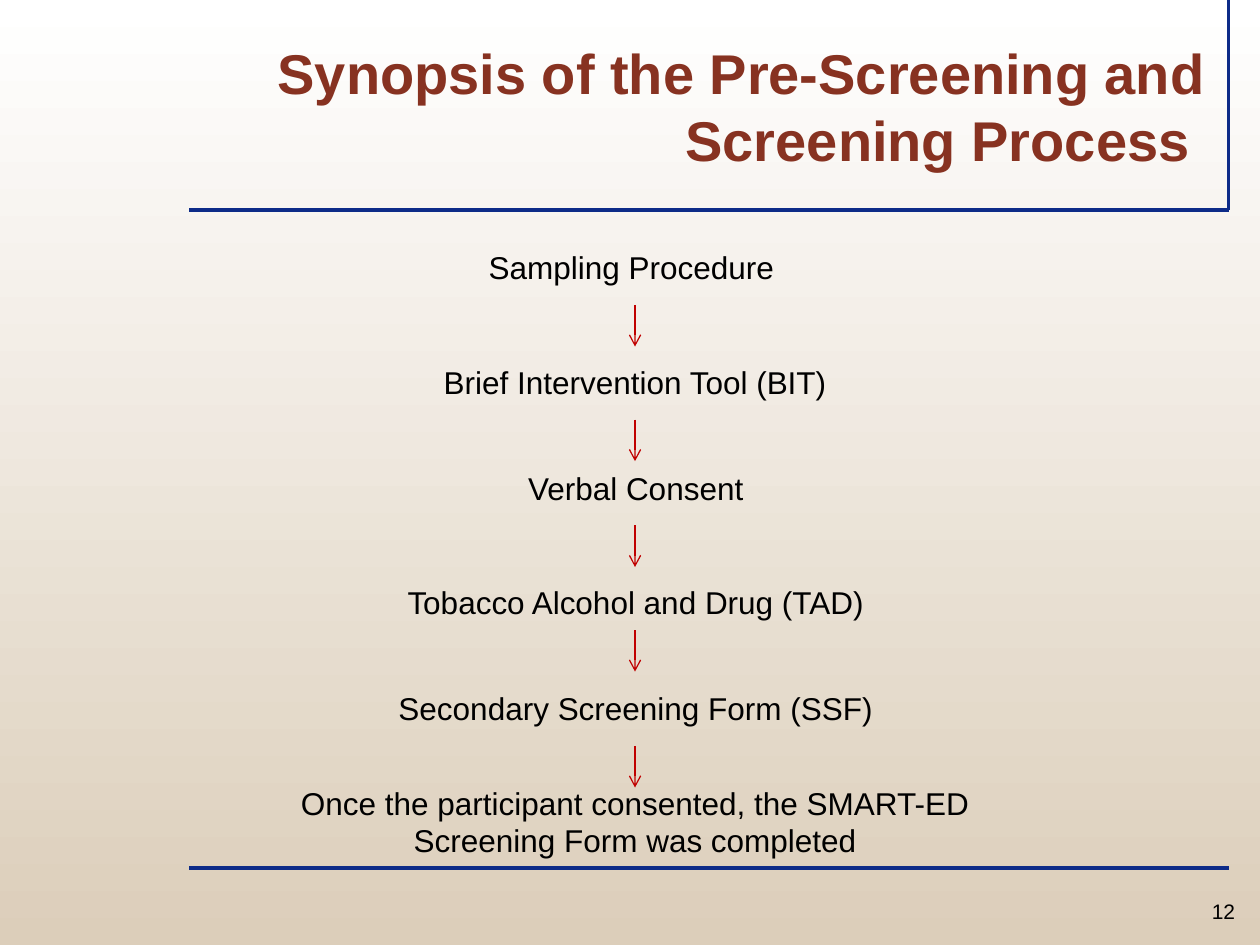
from pptx import Presentation
from pptx.dml.color import RGBColor
from pptx.enum.shapes import MSO_CONNECTOR as CONNECTOR
from pptx.enum.text import MSO_ANCHOR as ANCHOR, PP_ALIGN as ALIGN
from pptx.oxml.ns import qn
from pptx.util import Inches, Pt
from lxml.etree import SubElement

WHITE = RGBColor(0xFF, 0xFF, 0xFF)
SAND = RGBColor(0xDC, 0xCE, 0xBA)
NAVY = RGBColor(0x0D, 0x2B, 0x88)
BRICK = RGBColor(0x87, 0x32, 0x21)
RED = RGBColor(0xC0, 0x00, 0x00)
BLACK = RGBColor(0x00, 0x00, 0x00)

RULES = [(9.75, 0, 9.75, 1.67), (1.5, 1.67, 9.75, 1.67), (1.5, 6.89, 9.75, 6.89)]
STEPS = [
    ("Sampling Procedure ", (3.67, 1.92, 2.75, 0.42)),
    ("Brief Intervention Tool (BIT)", (3.29, 2.83, 3.5, 0.4)),
    ("Verbal Consent", (3.92, 3.67, 2.25, 0.42)),
    ("Tobacco Alcohol and Drug (TAD)", (2.92, 4.58, 4.25, 0.4)),
    ("Secondary Screening Form (SSF)", (2.92, 5.42, 4.25, 0.4)),
    ("Once the participant consented, the SMART-ED\nScreening Form was completed",
     (0.83, 6.17, 8.42, 0.71)),
]
ARROW_X, ARROW_LENGTH = 5.04, 0.33
ARROW_TOPS = [2.42, 3.33, 4.17, 5, 5.92]


def set_background(s):
    fill = s.background.fill
    fill.gradient()
    fill.gradient_angle = 270
    for stop, color in zip(fill.gradient_stops, (WHITE, SAND)):
        stop.color.rgb = color


def add_text(s, text, box, align=ALIGN.CENTER, anchor=ANCHOR.TOP, **font):
    tf = s.shapes.add_textbox(*map(Inches, box)).text_frame
    tf.word_wrap = True
    tf.vertical_anchor = anchor
    tf.text = text
    style = {"name": "Arial", "size": Pt(18), **font}
    color = style.pop("color", BLACK)
    for p in tf.paragraphs:
        p.alignment = align
        for r in p.runs:
            for name, value in style.items():
                setattr(r.font, name, value)
            r.font.color.rgb = color


def add_line(s, ends, color, width, arrow=False):
    line = s.shapes.add_connector(CONNECTOR.STRAIGHT, *map(Inches, ends))
    line.line.color.rgb = color
    line.line.width = Pt(width)
    if arrow:
        SubElement(line.line._get_or_add_ln(), qn("a:tailEnd"), type="arrow")
    SubElement(line._element.spPr, qn("a:effectLst"))


def main():
    prs = Presentation()
    prs.slide_width, prs.slide_height = Inches(10), Inches(7.5)
    s = prs.slides.add_slide(prs.slide_layouts[6])
    set_background(s)
    for ends in RULES:
        add_line(s, ends, NAVY, 2.25)
    add_text(s, "12", (9.42, 7.08, 0.58, 0.3), size=Pt(12))
    add_text(s, "Synopsis of the Pre-Screening and Screening Process ",
             (0.5, 0, 9.17, 1.42), ALIGN.RIGHT, ANCHOR.BOTTOM,
             size=Pt(32), bold=True, color=BRICK)
    for text, box in STEPS:
        add_text(s, text, box)
    for top in ARROW_TOPS:
        add_line(s, (ARROW_X, top, ARROW_X, top + ARROW_LENGTH), RED, 0.75, arrow=True)
    prs.save("out.pptx")


if __name__ == "__main__":
    main()
